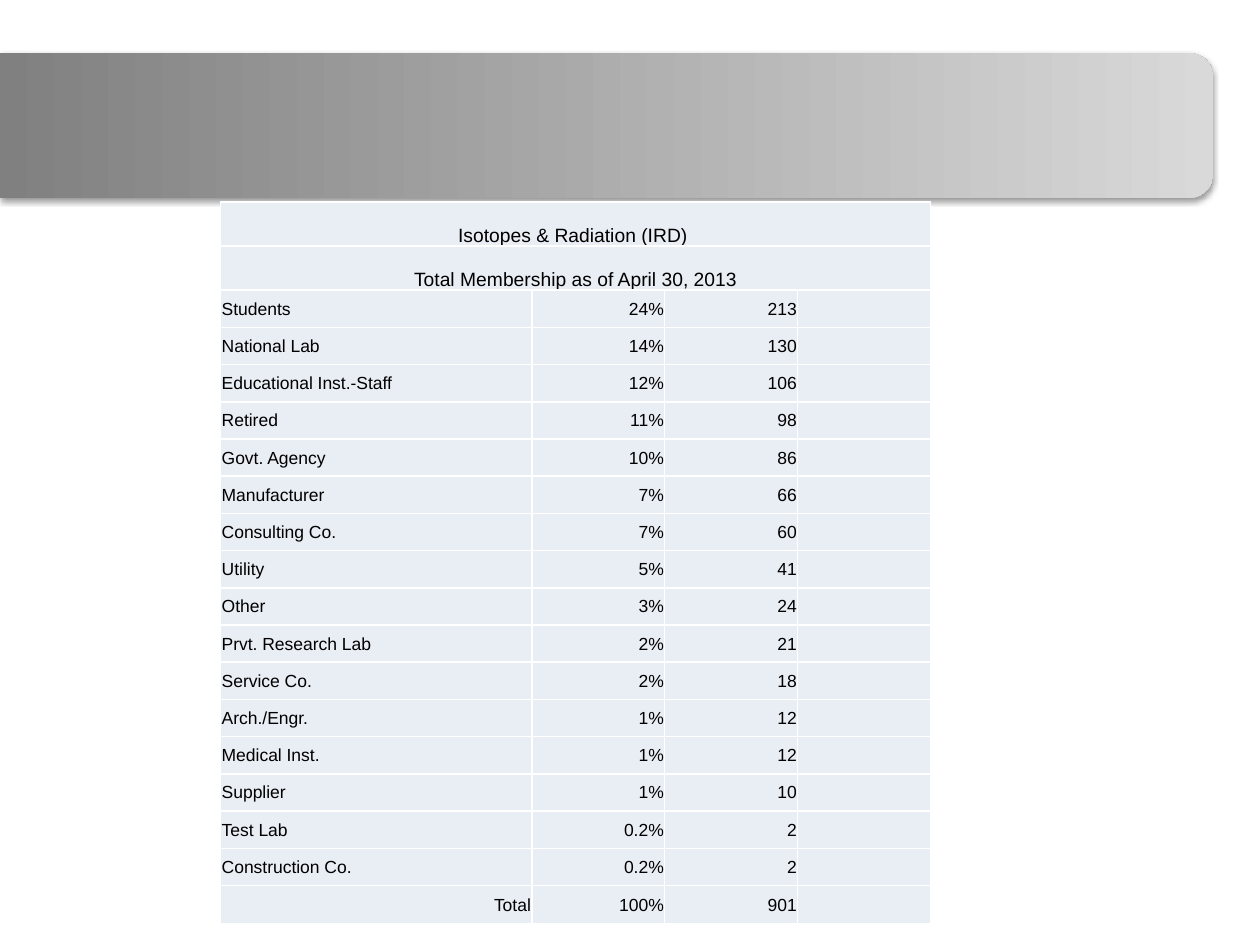
"""Build the Isotopes & Radiation membership table slide."""
from lxml.etree import SubElement
from pptx import Presentation
from pptx.dml.color import RGBColor
from pptx.enum.shapes import MSO_SHAPE
from pptx.enum.text import MSO_ANCHOR, PP_ALIGN
from pptx.oxml import parse_xml
from pptx.oxml.ns import nsdecls, qn
from pptx.util import Cm, Pt

COLORS = {"text": "000000", "cell": "E9EDF4", "border": "FFFFFF",
          "dark": "808080", "light": "D9D9D9", "shadow": "000000"}
TITLES = ["Isotopes & Radiation (IRD) ", "Total Membership as of April 30, 2013"]
MEMBERS = [
    ("Students", "24%", "213"),
    ("National Lab", "14%", "130"),
    ("Educational Inst.-Staff", "12%", "106"),
    ("Retired", "11%", "98"),
    ("Govt. Agency", "10%", "86"),
    ("Manufacturer", "7%", "66"),
    ("Consulting Co.", "7%", "60"),
    ("Utility", "5%", "41"),
    ("Other", "3%", "24"),
    ("Prvt. Research Lab", "2%", "21"),
    ("Service Co.", "2%", "18"),
    ("Arch./Engr.", "1%", "12"),
    ("Medical Inst.", "1%", "12"),
    ("Supplier", "1%", "10"),
    ("Test Lab", "0.2%", "2"),
    ("Construction Co.", "0.2%", "2"),
    ("Total", "100%", "901"),
]
COL_WIDTHS = [6.27, 2.68, 2.68, 2.68]
ROW_HEIGHTS = [0.89] * len(TITLES) + [0.75] * (len(MEMBERS) - 1) + [0.78]


def style_cell(cell, text, size, align, anchor):
    tcPr = cell._tc.get_or_add_tcPr()
    for side in ("lnL", "lnR", "lnT", "lnB"):
        tcPr.append(parse_xml(
            f'<a:{side} {nsdecls("a")} w="12700"><a:solidFill>'
            f'<a:srgbClr val="{COLORS["border"]}"/></a:solidFill></a:{side}>'))
    cell.fill.solid()
    cell.fill.fore_color.rgb = RGBColor.from_string(COLORS["cell"])
    cell.margin_left = cell.margin_right = cell.margin_top = Cm(0.02)
    cell.margin_bottom = 0
    cell.vertical_anchor = anchor
    p = cell.text_frame.paragraphs[0]
    p.alignment = align
    p.font.name = "Arial"
    p.font.size = Pt(size)
    p.font.color.rgb = RGBColor.from_string(COLORS["text"])
    if text:
        p.add_run().text = text
    else:
        SubElement(p._p, qn("a:endParaRPr"), sz=str(size * 100))


prs = Presentation()
prs.slide_width, prs.slide_height = Cm(25.4), Cm(19.05)
s = prs.slides.add_slide(prs.slide_layouts[6])

banner = s.shapes.add_shape(MSO_SHAPE.ROUND_2_SAME_RECTANGLE,
                            Cm(10.77), Cm(-9.7), Cm(2.92), Cm(24.46))
banner.rotation = 90
banner.line.fill.background()
banner.fill.gradient()
banner.fill.gradient_angle = 90
for stop, name in zip(banner.fill.gradient_stops, ("dark", "light")):
    stop.color.rgb = RGBColor.from_string(COLORS[name])
banner.shadow.inherit = False
effects = banner._element.spPr.find(qn("a:effectLst"))
effects.append(parse_xml(
    f'<a:outerShdw {nsdecls("a")} blurRad="40000" dist="20000" dir="5400000" '
    f'rotWithShape="0"><a:srgbClr val="{COLORS["shadow"]}">'
    '<a:alpha val="38000"/></a:srgbClr></a:outerShdw>'))

table = s.shapes.add_table(len(ROW_HEIGHTS), len(COL_WIDTHS), Cm(4.45), Cm(4.07),
                           Cm(sum(COL_WIDTHS)), Cm(sum(ROW_HEIGHTS))).table
table.first_row = table.horz_banding = False
for column, width in zip(table.columns, COL_WIDTHS):
    column.width = Cm(width)
for row, height in zip(table.rows, ROW_HEIGHTS):
    row.height = Cm(height)

for i, title in enumerate(TITLES):
    table.cell(i, 0).merge(table.cell(i, len(COL_WIDTHS) - 1))
    for j in range(len(COL_WIDTHS)):
        style_cell(table.cell(i, j), "" if j else title, 11,
                   PP_ALIGN.CENTER, MSO_ANCHOR.BOTTOM)

for i, member in enumerate(MEMBERS, len(TITLES)):
    for j, text in enumerate((*member, "")):
        left = j == 0 and text != "Total"
        style_cell(table.cell(i, j), text, 10,
                   PP_ALIGN.LEFT if left else PP_ALIGN.RIGHT, MSO_ANCHOR.MIDDLE)

prs.save("out.pptx")
